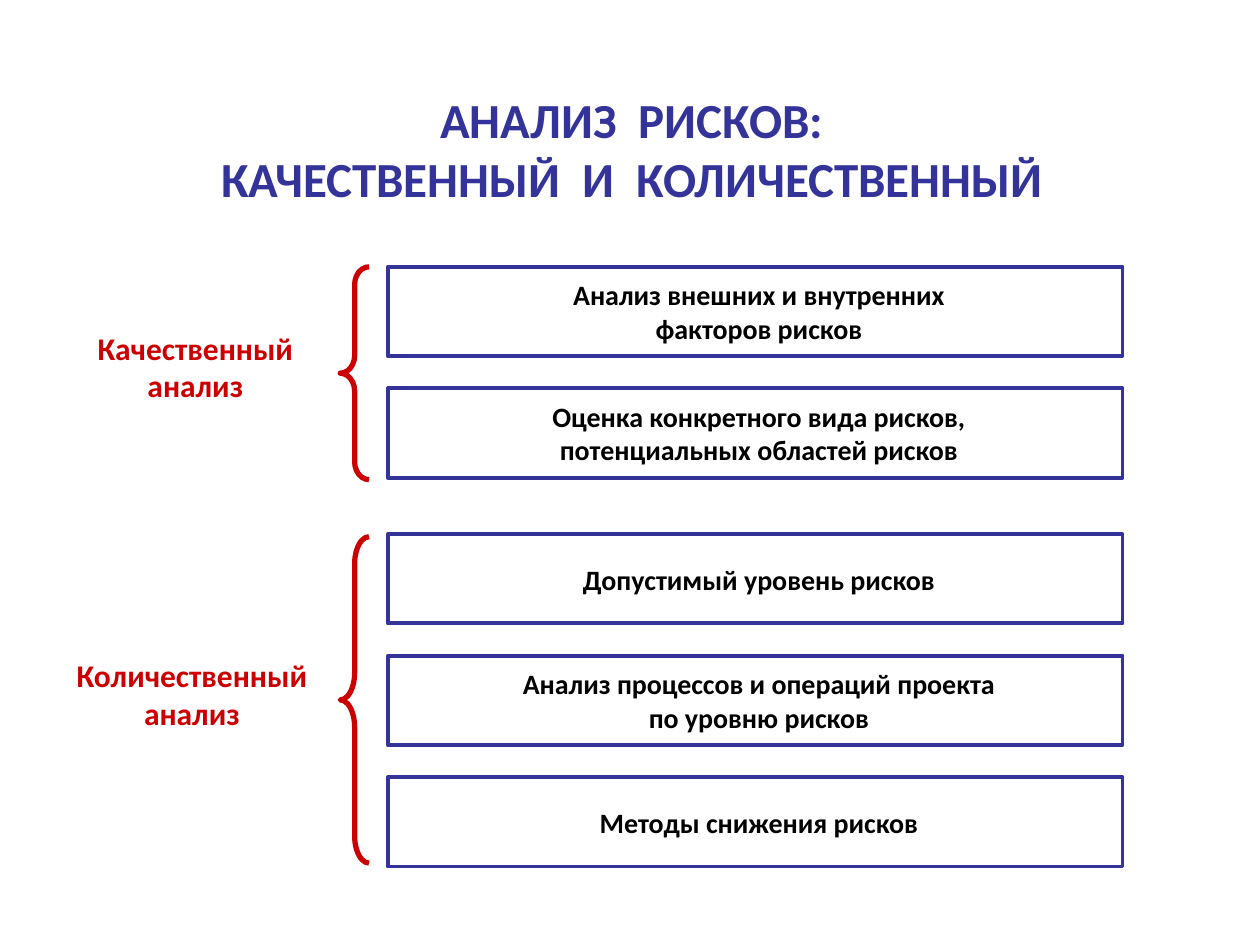
from pptx import Presentation
from pptx.dml.color import RGBColor
from pptx.enum.shapes import MSO_SHAPE
from pptx.enum.text import MSO_ANCHOR, MSO_AUTO_SIZE, PP_ALIGN
from pptx.util import Cm, Pt

COLORS = {"blue": "333399", "red": "CC0000", "black": "000000", "white": "FFFFFF"}
FONT = "Calibri"
BOX_LEFT, BOX_WIDTH, BOX_HEIGHT, PITCH = 7.82, 14.81, 1.8, 2.45

GROUPS = [
    {
        "top": 5.38,
        "label": ("Качественный\vанализ", 1.4, 6.5, 5.08),
        "brace": (5.38, 4.29, 0.62),
        "items": [
            "Анализ внешних и внутренних\vфакторов рисков",
            "Оценка конкретного вида рисков,\vпотенциальных областей рисков",
        ],
    },
    {
        "top": 10.77,
        "label": ("Количественный\vанализ", 0.91, 13.11, 5.92),
        "brace": (10.82, 6.58, 0.95),
        "items": [
            "Допустимый уровень рисков",
            "Анализ процессов и операций проекта\vпо уровню рисков",
            "Методы снижения рисков",
        ],
    },
]


def color(name):
    return RGBColor.from_string(COLORS[name])


def write(frame, text, size, name):
    frame.text = text
    for para in frame.paragraphs:
        para.alignment = PP_ALIGN.CENTER
        for run in para.runs:
            run.font.name = FONT
            run.font.size = Pt(size)
            run.font.bold = True
            run.font.color.rgb = color(name)


def add_title(slide, text):
    box = slide.shapes.add_textbox(Cm(1.14), Cm(1.68), Cm(23.19), Cm(2.9))
    box.text_frame.word_wrap = True
    write(box.text_frame, text, 28, "blue")


def add_label(slide, text, left, top, width):
    box = slide.shapes.add_textbox(Cm(left), Cm(top), Cm(width), Cm(1.78))
    frame = box.text_frame
    frame.word_wrap = False
    frame.auto_size = MSO_AUTO_SIZE.SHAPE_TO_FIT_TEXT
    write(frame, text, 18, "red")


def add_box(slide, text, top):
    box = slide.shapes.add_shape(
        MSO_SHAPE.RECTANGLE, Cm(BOX_LEFT), Cm(top), Cm(BOX_WIDTH), Cm(BOX_HEIGHT)
    )
    box.shadow.inherit = False
    box.fill.solid()
    box.fill.fore_color.rgb = color("white")
    box.line.color.rgb = color("blue")
    box.line.width = Pt(2.25)
    frame = box.text_frame
    frame.word_wrap = True
    frame.vertical_anchor = MSO_ANCHOR.MIDDLE
    frame.margin_left = Cm(0.4)
    write(frame, text, 16, "black")


def add_brace(slide, top, height, curve):
    brace = slide.shapes.add_shape(
        MSO_SHAPE.LEFT_BRACE, Cm(6.86), Cm(top), Cm(0.58), Cm(height)
    )
    brace.shadow.inherit = False
    brace.adjustments[0] = curve
    brace.fill.background()
    brace.line.color.rgb = color("red")
    brace.line.width = Pt(3)


def main():
    deck = Presentation()
    deck.slide_width, deck.slide_height = Cm(25.4), Cm(19.05)
    slide = deck.slides.add_slide(deck.slide_layouts[6])
    for group in GROUPS:
        for row, text in enumerate(group["items"]):
            add_box(slide, text, group["top"] + row * PITCH)
        add_label(slide, *group["label"])
        add_brace(slide, *group["brace"])
    add_title(slide, "АНАЛИЗ  РИСКОВ:\vКАЧЕСТВЕННЫЙ  И  КОЛИЧЕСТВЕННЫЙ")
    deck.save("out.pptx")


if __name__ == "__main__":
    main()
